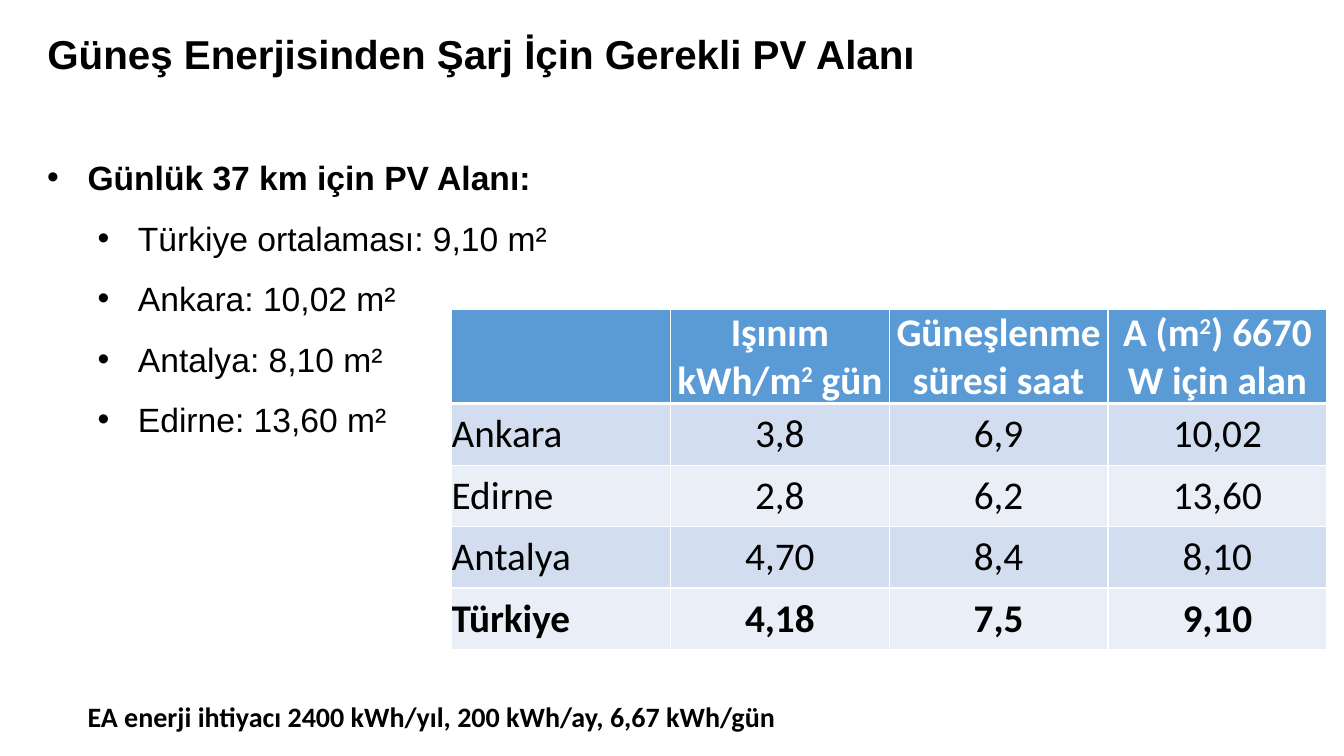
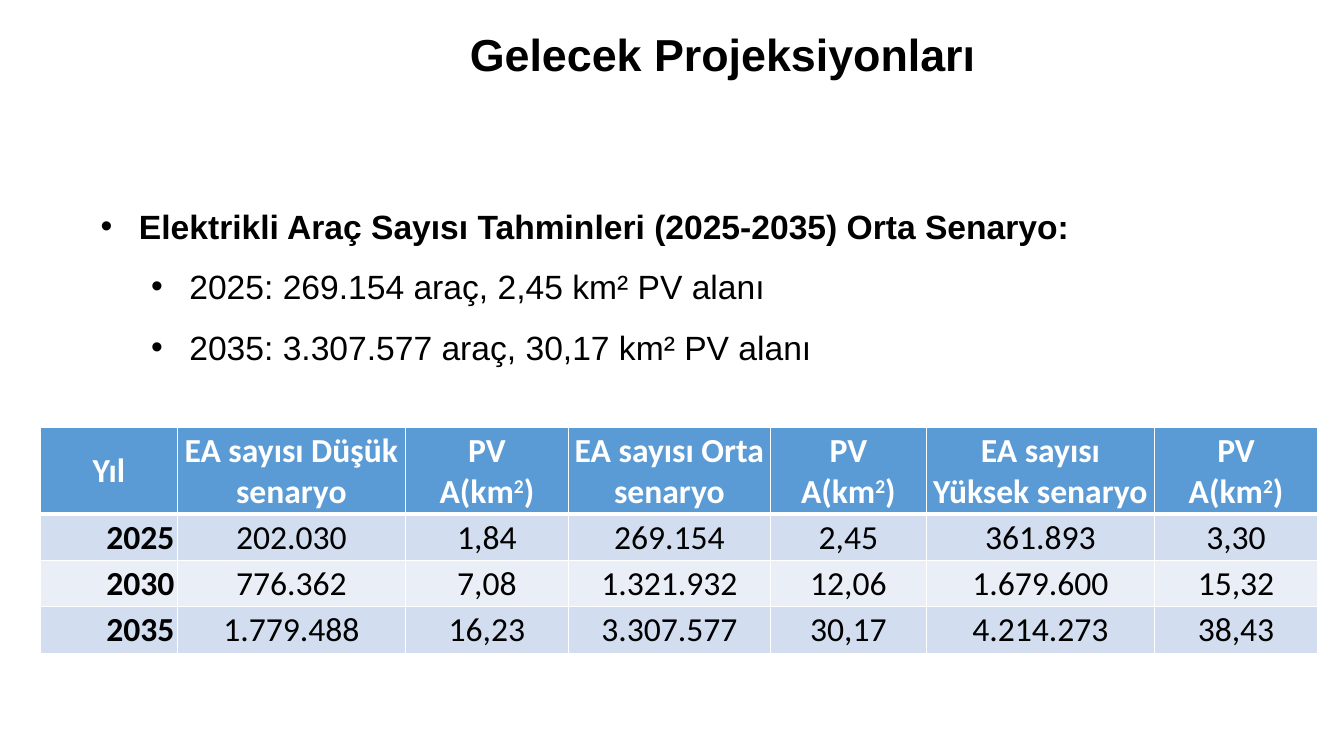
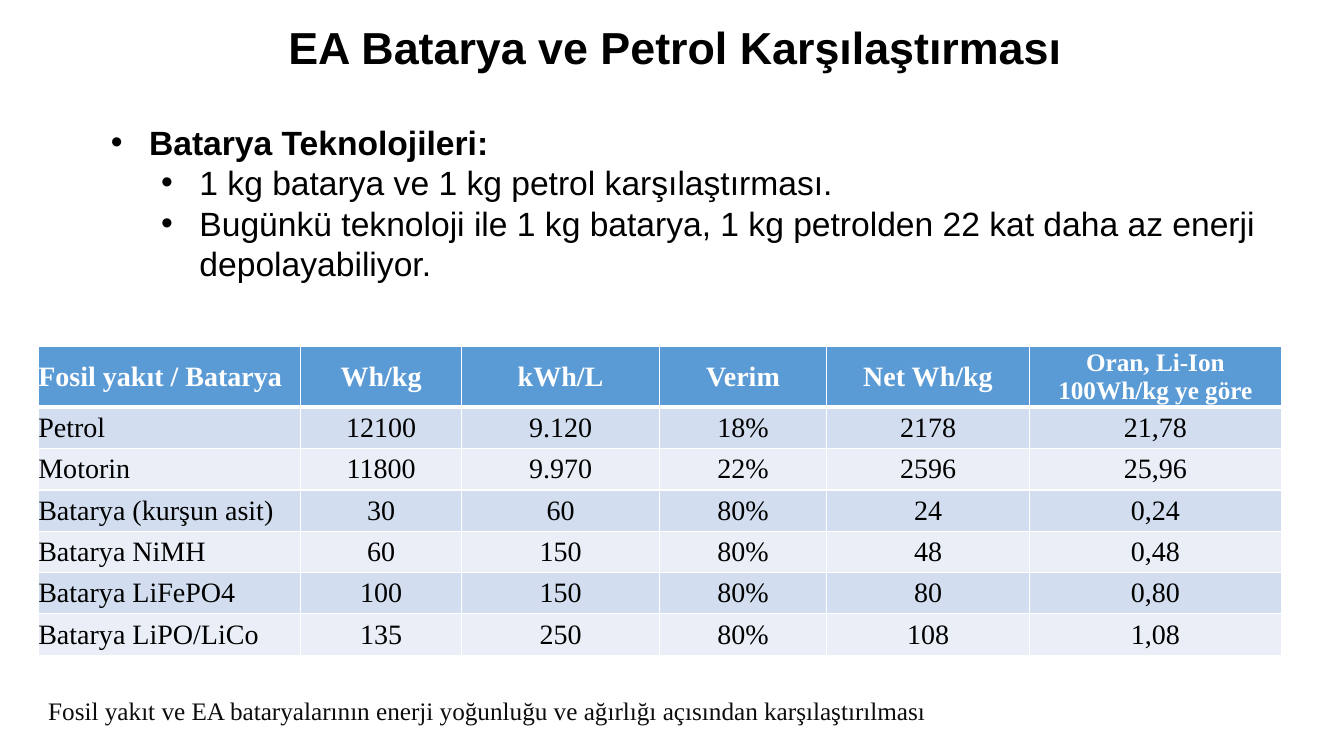
import pptx
import pptx.dml.color
import pptx.enum.text
import pptx.oxml
import pptx.oxml.ns
import pptx.util

PX = 9144  # EMU per px, 100 px to the inch
RGB = pptx.dml.color.RGBColor
BLACK = RGB(0x00, 0x00, 0x00)
INK = RGB(0x0D, 0x0D, 0x0D)
WHITE = RGB(0xFF, 0xFF, 0xFF)
HEADER = RGB(0x5B, 0x9B, 0xD5)
BANDS = (RGB(0xD2, 0xDE, 0xEF), RGB(0xEA, 0xEF, 0xF7))
SANS, TABLE_SANS, SERIF = "Arial", "Calibri", "Times New Roman"
LEFT, CENTER, RIGHT = (pptx.enum.text.PP_ALIGN.LEFT, pptx.enum.text.PP_ALIGN.CENTER,
                       pptx.enum.text.PP_ALIGN.RIGHT)
MIDDLE = pptx.enum.text.MSO_ANCHOR.MIDDLE


def px(n):
    return pptx.util.Emu(n * PX)


def apply(target, values):
    for name, value in values.items():
        setattr(target, name, value)


def place(box):
    return dict(zip(("left", "top", "width", "height"), map(px, box)))


def add_xml(parent, xml):
    ns = pptx.oxml.ns.nsdecls("a")
    parent.append(pptx.oxml.parse_xml(xml.replace(" ", f" {ns} ", 1)))


def add_runs(p, text, name, size, color, bold=False):
    """Text between carets is set as superscript."""
    for i, part in enumerate(text.split("^")):
        if not part:
            continue
        r = p.add_run()
        r.text = part
        apply(r.font, {"name": name, "size": pptx.util.Pt(size), "bold": bold})
        r.font.color.rgb = color
        if i % 2:
            r._r.get_or_add_rPr().set("baseline", "30000")


def next_paragraph(tf, i):
    return tf.add_paragraph() if i else tf.paragraphs[0]


# Slide with its title
def add_slide(prs, text, box, size=32, align=LEFT):
    s = prs.slides.add_slide(prs.slide_layouts[5])
    title = s.shapes.title
    apply(title, place(box))
    tf = title.text_frame
    apply(tf, {"word_wrap": True, "vertical_anchor": MIDDLE,
               "auto_size": pptx.enum.text.MSO_AUTO_SIZE.NONE})
    p = tf.paragraphs[0]
    apply(p, {"alignment": align, "line_spacing": 0.9})
    add_runs(p, text, SANS, size, BLACK, True)
    return s


# Bold heading with points one level below
def add_bullets(s, box, heading, points, indent, hang, spacing):
    tf = s.shapes.add_textbox(*place(box).values()).text_frame
    tf.word_wrap = True
    for i, text in enumerate([heading, *points]):
        p = next_paragraph(tf, i)
        pPr = p._p.get_or_add_pPr()
        pPr.set("marL", str(px(indent + (50 if i else 0))))
        pPr.set("indent", str(px(-hang)))
        add_xml(pPr, '<a:buFont typeface="Arial"/>')
        add_xml(pPr, '<a:buChar char="•"/>')
        p.line_spacing = spacing
        add_runs(p, text, SANS, 24, BLACK, i == 0)


def add_note(s, box, text, **font):
    tf = s.shapes.add_textbox(*place(box).values()).text_frame
    tf.word_wrap = True
    add_runs(tf.paragraphs[0], text, **font)


# Banded table
def add_borders(cell, row):
    tcPr = cell._tc.get_or_add_tcPr()
    thick = {0: "B", 1: "T"}.get(row)  # the rule under the header
    for side in "LRTB":
        width = pptx.util.Pt(3 if side == thick else 1)
        add_xml(tcPr, f'<a:ln{side} w="{width}"><a:solidFill><a:srgbClr val="{WHITE}"/>'
                      f'</a:solidFill></a:ln{side}>')


def add_table(s, left, top, cols, header_height, row_height, rows, name, size,
              inset=0, key_align=LEFT, bold_row=None, bold_col=None, header_sizes=None):
    heights = [header_height] + [row_height] * (len(rows) - 1)
    table = s.shapes.add_table(len(rows), len(cols), px(left), px(top),
                               px(sum(cols)), px(sum(heights))).table
    for col, width in zip(table.columns, cols):
        col.width = px(width)
    for row, height in zip(table.rows, heights):
        row.height = px(height)
    margins = {f"margin_{side}": px(inset) for side in ("left", "right", "top", "bottom")}
    for i, row in enumerate(rows):
        head = i == 0
        for j, text in enumerate(row):
            cell = table.cell(i, j)
            apply(cell, {**margins, "vertical_anchor": MIDDLE})
            add_borders(cell, i)
            cell.fill.solid()
            cell.fill.fore_color.rgb = HEADER if head else BANDS[(i - 1) % 2]
            is_key = j == 0 and not (head and key_align == RIGHT)
            cell_size = (header_sizes or {}).get(j, size) if head else size
            for k, line in enumerate(text.split("\n")):
                p = next_paragraph(cell.text_frame, k)
                p.alignment = key_align if is_key else CENTER
                add_runs(p, line, name, cell_size, WHITE if head else BLACK,
                         head or i == bold_row or j == bold_col)


def build_pv_area(prs):
    s = add_slide(prs, "Güneş Enerjisinden Şarj İçin Gerekli PV Alanı", (37, 18, 896, 76), 28.8)
    add_bullets(s, (37, 131, 586, 306), "Günlük 37 km için PV Alanı:",
                ["Türkiye ortalaması: 9,10 m²", "Ankara: 10,02 m²",
                 "Antalya: 8,10 m²", "Edirne: 13,60 m²"], 40, 40, 1.5)
    add_table(s, 448, 307, [217] * 4, 93, 61, [
        ("", "Işınım kWh/m^2^ gün", "Güneşlenme süresi saat", "A (m^2^) 6670 W için alan"),
        ("Ankara", "3,8", "6,9", "10,02"),
        ("Edirne", "2,8", "6,2", "13,60"),
        ("Antalya", "4,70", "8,4", "8,10"),
        ("Türkiye", "4,18", "7,5", "9,10"),
    ], TABLE_SANS, 28, bold_row=4)
    add_note(s, (77, 689, 714, 44), "EA enerji ihtiyacı 2400 kWh/yıl, 200 kWh/ay, 6,67 kWh/gün",
             name=TABLE_SANS, size=20, color=BLACK, bold=True)


def build_projections(prs):
    s = add_slide(prs, "Gelecek Projeksiyonları", (282, 19, 870, 76), align=CENTER)
    add_bullets(s, (40, 179, 1202, 207),
                "Elektrikli Araç Sayısı Tahminleri (2025-2035) Orta Senaryo:",
                ["2025: 269.154 araç, 2,45 km² PV alanı",
                 "2035: 3.307.577 araç, 30,17 km² PV alanı"], 88, 38, 1.5)
    area = "PV\nA(km^2^)"
    add_table(s, 40, 424, [136, 226, 162, 200, 155, 226, 162], 86, 45, [
        ("Yıl", "EA sayısı Düşük senaryo", area, "EA sayısı Orta senaryo", area,
         "EA sayısı Yüksek senaryo", area),
        ("2025", "202.030", "1,84", "269.154", "2,45", "361.893", "3,30"),
        ("2030", "776.362", "7,08", "1.321.932", "12,06", "1.679.600", "15,32"),
        ("2035", "1.779.488", "16,23", "3.307.577", "30,17", "4.214.273", "38,43"),
    ], TABLE_SANS, 24, inset=3, key_align=RIGHT, bold_col=0)


def build_battery_comparison(prs):
    s = add_slide(prs, "EA Batarya ve Petrol Karşılaştırması", (276, 12, 870, 76))
    add_bullets(s, (50, 116, 1222, 172), "Batarya Teknolojileri:",
                ["1 kg batarya ve 1 kg petrol karşılaştırması.",
                 "Bugünkü teknoloji ile 1 kg batarya, 1 kg petrolden 22 kat daha az enerji "
                 "depolayabiliyor."], 88, 38, 1.0)
    add_note(s, (38, 685, 1032, 40),
             "Fosil yakıt ve EA bataryalarının enerji yoğunluğu ve ağırlığı açısından "
             "karşılaştırılması", name=SERIF, size=18, color=INK)
    add_table(s, 38, 344, [260, 160, 196, 166, 201, 250], 60, 41, [
        ("Fosil yakıt / Batarya", "Wh/kg", "kWh/L", "Verim", "Net Wh/kg",
         "Oran, Li-Ion\n100Wh/kg ye göre"),
        ("Petrol", "12100", "9.120", "18%", "2178", "21,78"),
        ("Motorin", "11800", "9.970", "22%", "2596", "25,96"),
        ("Batarya (kurşun asit)", "30", "60", "80%", "24", "0,24"),
        ("Batarya NiMH", "60", "150", "80%", "48", "0,48"),
        ("Batarya LiFePO4", "100", "150", "80%", "80", "0,80"),
        ("Batarya LiPO/LiCo", "135", "250", "80%", "108", "1,08"),
    ], SERIF, 20, header_sizes={5: 18})


def main():
    prs = pptx.Presentation()
    apply(prs, {"slide_width": px(1333), "slide_height": px(750)})
    build_pv_area(prs)
    build_projections(prs)
    build_battery_comparison(prs)
    prs.save("out.pptx")


if __name__ == "__main__":
    main()
